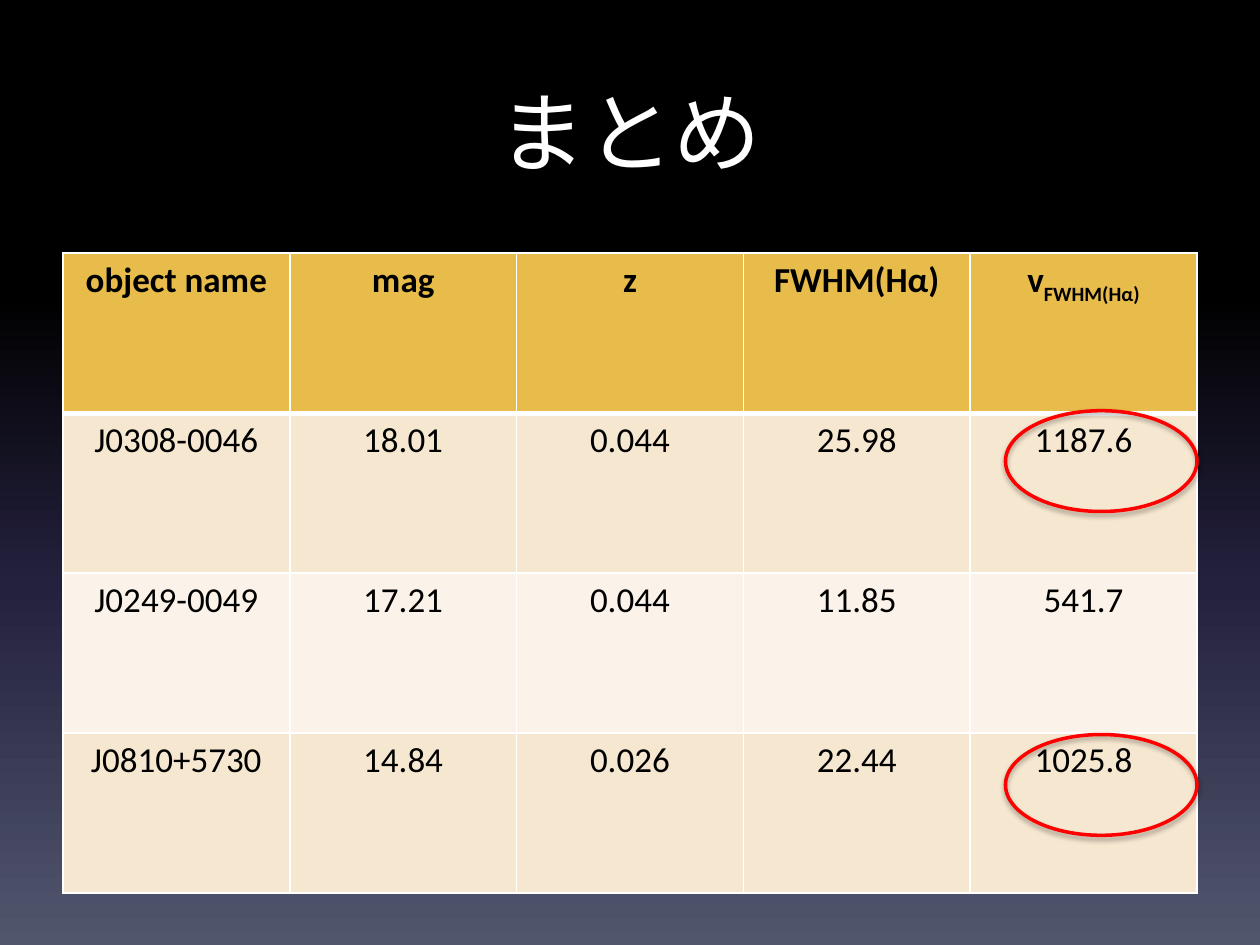
from lxml import etree
from pptx import Presentation
from pptx.dml.color import RGBColor
from pptx.enum.shapes import MSO_SHAPE as Shape
from pptx.enum.text import MSO_ANCHOR as Anchor, PP_ALIGN as Align
from pptx.oxml.ns import qn
from pptx.util import Inches, Pt

WHITE = RGBColor(0xFF, 0xFF, 0xFF)
BLACK = RGBColor(0x00, 0x00, 0x00)
RED = RGBColor(0xFF, 0x00, 0x00)
GOLD = RGBColor(0xE8, 0xBC, 0x4A)
SAND = RGBColor(0xF6, 0xE7, 0xD0)
CREAM = RGBColor(0xFB, 0xF3, 0xE9)
NAVY = RGBColor(0x24, 0x21, 0x3E)
SLATE = RGBColor(0x51, 0x56, 0x6D)

FONT = "Calibri"
SKY = [(0, BLACK), (31, BLACK), (62, NAVY), (100, SLATE)]
ROWS = [
    ["object name", "mag", "z", "FWHM(Hα)", "v"],
    ["J0308-0046", "18.01", "0.044", "25.98", "1187.6"],
    ["J0249-0049", "17.21", "0.044", "11.85", "541.7"],
    ["J0810+5730", "14.84", "0.026", "22.44", "1025.8"],
]
SUB = "FWHM(Hα)"


def add_sub(node, tag, **attrs):
    """Append a child element with the given attributes."""
    return etree.SubElement(node, qn(tag), {k: str(v) for k, v in attrs.items()})


def add_color(node, color):
    return add_sub(node, "a:srgbClr", val=color)


def paint_sky(slide):
    fill = slide.background.fill
    fill.gradient()
    fill.gradient_angle = 270  # counter-clockwise: top to bottom
    stops = slide.element.find(".//" + qn("a:gsLst"))
    for stop in list(stops):
        stops.remove(stop)
    for pos, color in SKY:
        add_color(add_sub(stops, "a:gs", pos=pos * 1000), color)


def style(para, size, color, bold=False):
    para.alignment = Align.CENTER
    for run in para.runs:
        font = run.font
        font.name, font.size, font.bold = FONT, Pt(size), bold
        font.color.rgb = color


def add_title(slide, text):
    box = slide.shapes.add_textbox(Inches(0.5), Inches(0.5), Inches(9), Inches(1.07))
    frame = box.text_frame
    frame.word_wrap = True
    frame.vertical_anchor = Anchor.MIDDLE
    frame.text = text
    style(frame.paragraphs[0], 50, WHITE)


def set_edges(cell, below):
    """Draw white cell borders; below is the width of the bottom one."""
    props = cell._tc.get_or_add_tcPr()
    sides = [("L", 1), ("R", 1), ("T", 1), ("B", below)]
    for spot, (side, width) in enumerate(sides):
        line = add_sub(props, "a:ln" + side, w=Pt(width))
        add_color(add_sub(line, "a:solidFill"), WHITE)
        props.insert(spot, line)


def add_grid(slide):
    frame = slide.shapes.add_table(len(ROWS), len(ROWS[0]), Inches(0.5),
                                   Inches(2.01), Inches(9), Inches(5.08))
    table = frame.table
    for r, row in enumerate(ROWS):
        head = r == 0
        for c, text in enumerate(row):
            cell = table.cell(r, c)
            cell.fill.solid()
            cell.fill.fore_color.rgb = GOLD if head else SAND if r % 2 else CREAM
            set_edges(cell, 3 if head else 1)
            cell.text_frame.text = text
            style(cell.text_frame.paragraphs[0], 20, BLACK, head)
    para = table.cell(0, len(ROWS[0]) - 1).text_frame.paragraphs[0]
    run = para.add_run()
    run.text = SUB
    style(para, 20, BLACK, True)
    run.font._element.set("baseline", "-25000")


def add_ring(slide, top):
    ring = slide.shapes.add_shape(Shape.OVAL, Inches(7.98), Inches(top),
                                  Inches(1.52), Inches(0.8))
    ring.fill.background()
    ring.line.color.rgb = RED
    ring.line.width = Pt(2)
    ring.shadow.inherit = False
    effects = ring.element.spPr.find(qn("a:effectLst"))
    shade = add_sub(effects, "a:outerShdw", blurRad=Pt(3.1), dist=Pt(1.8),
                    dir=90 * 60000, rotWithShape=0)
    add_sub(add_color(shade, BLACK), "a:alpha", val=35000)


def main():
    deck = Presentation()
    deck.slide_width, deck.slide_height = Inches(10), Inches(7.5)
    slide = deck.slides.add_slide(deck.slide_layouts[6])
    paint_sky(slide)
    add_title(slide, "まとめ")
    add_grid(slide)
    for top in (3.26, 5.83):
        add_ring(slide, top)
    deck.save("out.pptx")


if __name__ == "__main__":
    main()
